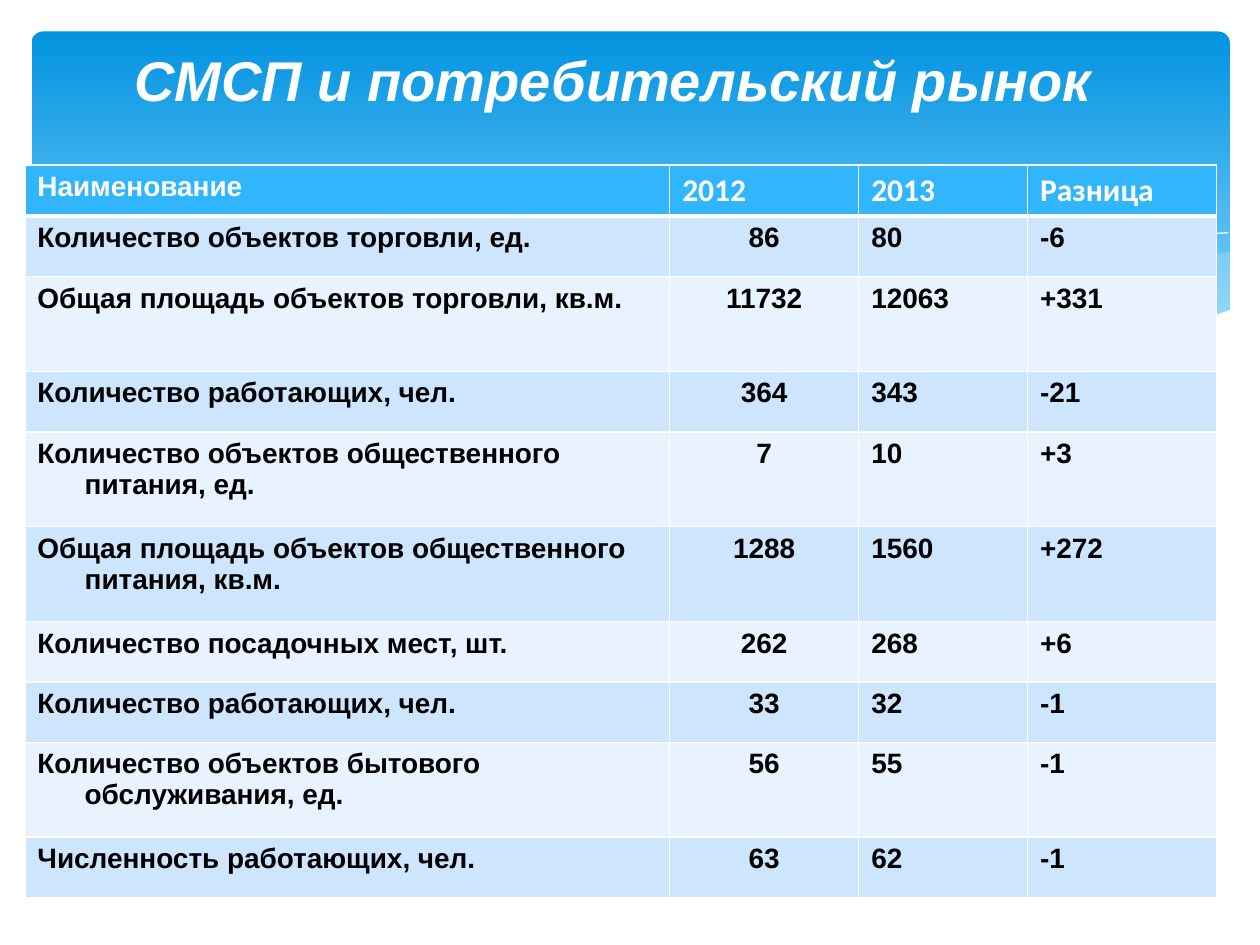
import pptx
import pptx.dml.color
import pptx.enum.dml
import pptx.enum.shapes
import pptx.enum.text
import pptx.oxml
import pptx.oxml.ns
import pptx.util
from dataclasses import dataclass

Pt = pptx.util.Pt
Align = pptx.enum.text.PP_ALIGN


@dataclass(frozen=True)
class Theme:
    white: str = "FFFFFF"
    black: str = "000000"
    banner_top: str = "0293E0"
    banner_bottom: str = "83D3FE"
    wave: str = "C6E7FC"
    header: str = "31B6FD"
    bands: tuple = ("CEE5FE", "E8F3FF")
    body_font: str = "Arial"
    header_font: str = "Calibri"
    title_size: int = 32
    header_size: int = 18
    body_size: int = 16


HEADINGS = ("Наименование", "2012", "2013", "Разница")
ROWS = (
    ("Количество объектов торговли, ед.", "86", "80", "-6"),
    ("Общая площадь объектов торговли, кв.м.", "11732", "12063", "+331"),
    ("Количество работающих, чел.", "364", "343", "-21"),
    ("Количество объектов общественного питания, ед.", "7", "10", "+3"),
    ("Общая площадь объектов общественного питания, кв.м.", "1288", "1560", "+272"),
    ("Количество посадочных мест, шт.", "262", "268", "+6"),
    ("Количество работающих, чел.", "33", "32", "-1"),
    ("Количество объектов бытового обслуживания, ед.", "56", "55", "-1"),
    ("Численность работающих, чел.", "63", "62", "-1"),
)
COLUMN_WIDTHS = (368.5, 108, 96.5, 108)
HEADER_HEIGHT, SHORT_ROW, TALL_ROW = 29.2, 34.5, 54.25
TALL_ROWS = (2, 4, 5, 8)

RIGHT_WAVE = (
    (702, 144), (673, 149), (620, 160.5), (579.5, 170.5), (525, 182), (476, 191),
    (507.5, 195), (545, 198.5), (578, 200), (615, 198.5), (646, 194.5),
    (673, 188.5), (693.5, 181.5), (702.7, 178), (702.7, 144),
)
LONG_WAVE = (
    (643, 196.5), (602.5, 191), (558, 183), (508, 173), (453, 160), (409.5, 150),
    (370, 142.5), (335, 137.5), (302.5, 134.5), (273.5, 133.2), (236, 134.5),
    (206, 137.5), (246, 143.5), (291, 152), (323.5, 160), (381.5, 173),
    (432.5, 183.5), (479, 191.5), (520, 197.5), (556.5, 199.5), (589, 200),
    (617, 199.5),
)
FALLING_LINE = (
    (222.5, 140.5), (247.5, 137), (278.5, 134.5), (312, 134.5), (352, 137),
    (400.5, 142), (458, 150), (523.5, 162.5), (572.5, 173.5), (625.5, 188), (653, 196),
)
RISING_LINE = (
    (441.5, 185), (484, 173.5), (538.5, 160.5), (580.5, 151), (623.5, 143.5),
    (655, 138), (684.5, 134.5), (702, 133.2),
)
WHITE_WAVE = (
    (703.4, 177), (684, 184.5), (662.5, 191), (638.5, 195), (612, 198),
    (582.5, 199.5), (548, 198), (510, 194.5), (466.5, 188.5), (417, 180),
    (362, 168), (322, 158.5), (281.5, 149), (245, 142), (210, 137), (180, 134),
    (139, 132.5), (105, 133), (76.5, 136), (54.5, 140.5), (33, 146),
    (16.6, 153.5), (16.6, 237), (703.4, 237),
)


def rgb(color):
    return pptx.dml.color.RGBColor.from_string(color)


def write_text(frame, text, *, font, size, color, italic=False, align=Align.LEFT,
               hanging=0, space_before=0):
    paragraph = frame.paragraphs[0]
    paragraph.alignment = align
    paragraph.space_before = Pt(space_before)
    if hanging:
        properties = paragraph._p.get_or_add_pPr()
        properties.set("marL", str(Pt(hanging)))
        properties.set("indent", str(-Pt(hanging)))
    run = paragraph.add_run()
    run.text = text
    run.font.name = font
    run.font.size = Pt(size)
    run.font.bold = True
    run.font.italic = italic
    run.font.color.rgb = rgb(color)


def set_borders(cell, color, **widths):
    """Draw cell borders; widths are keyed by side: L, R, T, B."""
    properties = cell._tc.get_or_add_tcPr()
    for position, (side, width) in enumerate(widths.items()):
        properties.insert(position, pptx.oxml.parse_xml(
            f'<a:ln{side} {pptx.oxml.ns.nsdecls("a")} w="{Pt(width)}"><a:solidFill>'
            f'<a:srgbClr val="{color}"/></a:solidFill></a:ln{side}>'))


class SlideBuilder:
    def __init__(self, slide, theme):
        self.slide = slide
        self.theme = theme

    def banner(self, left, top, width, height):
        shape = self.slide.shapes.add_shape(
            pptx.enum.shapes.MSO_SHAPE.ROUNDED_RECTANGLE,
            Pt(left), Pt(top), Pt(width), Pt(height))
        shape.adjustments[0] = 0.034
        shape.shadow.inherit = False
        shape.line.fill.background()
        shape.fill.gradient()
        shape.fill.gradient_angle = 270
        stops = ((0, self.theme.banner_top), (0.9, self.theme.banner_bottom))
        for stop, (position, color) in zip(shape.fill.gradient_stops, stops):
            stop.position = position
            stop.color.rgb = rgb(color)

    def outline(self, points, closed):
        builder = self.slide.shapes.build_freeform(*points[0], scale=Pt(1))
        builder.add_line_segments(points[1:], close=closed)
        shape = builder.convert_to_shape()
        shape.shadow.inherit = False
        return shape

    def wave(self, points, color, opacity=100):
        shape = self.outline(points, closed=True)
        shape.line.fill.background()
        shape.fill.solid()
        shape.fill.fore_color.rgb = rgb(color)
        if opacity < 100:
            color_element = shape._element.spPr.find(
                ".//" + pptx.oxml.ns.qn("a:srgbClr"))
            color_element.append(pptx.oxml.parse_xml(
                f'<a:alpha {pptx.oxml.ns.nsdecls("a")} val="{opacity * 1000}"/>'))

    def curve(self, points):
        shape = self.outline(points, closed=False)
        shape.fill.background()
        shape.line.color.rgb = rgb(self.theme.white)
        shape.line.width = Pt(0)

    def title(self, text, left, top, width, height):
        frame = self.slide.shapes.add_textbox(
            Pt(left), Pt(top), Pt(width), Pt(height)).text_frame
        frame.word_wrap = True
        frame.vertical_anchor = pptx.enum.text.MSO_ANCHOR.MIDDLE
        write_text(frame, text, font=self.theme.body_font, size=self.theme.title_size,
                   color=self.theme.white, italic=True, align=Align.CENTER)

    def table(self, left, top):
        theme = self.theme
        heights = [HEADER_HEIGHT] + [
            TALL_ROW if row in TALL_ROWS else SHORT_ROW
            for row in range(1, len(ROWS) + 1)]
        table = self.slide.shapes.add_table(
            len(heights), len(HEADINGS), Pt(left), Pt(top),
            Pt(sum(COLUMN_WIDTHS)), Pt(sum(heights))).table
        table.horz_banding = False
        for column, width in zip(table.columns, COLUMN_WIDTHS):
            column.width = Pt(width)
        for row_index, values in enumerate((HEADINGS, *ROWS)):
            table.rows[row_index].height = Pt(heights[row_index])
            for column_index, text in enumerate(values):
                cell = table.cell(row_index, column_index)
                first = column_index == 0
                style = dict(font=theme.body_font, size=theme.body_size)
                if row_index == 0:
                    fill = theme.header
                    style["color"] = theme.white
                    if first:
                        style["space_before"] = 3.2
                    else:
                        style.update(font=theme.header_font, size=theme.header_size)
                else:
                    fill = theme.bands[(row_index - 1) % 2]
                    style.update(color=theme.black, hanging=27 if column_index < 2 else 0)
                    if column_index == 1:
                        style["align"] = Align.CENTER
                cell.fill.solid()
                cell.fill.fore_color.rgb = rgb(fill)
                set_borders(cell, theme.white, L=1, R=1, T=3 if row_index == 1 else 1,
                            B=3 if row_index == 0 else 1)
                write_text(cell.text_frame, text, **style)


def main():
    presentation = pptx.Presentation()
    presentation.slide_width, presentation.slide_height = Pt(720), Pt(540)
    theme = Theme()
    builder = SlideBuilder(
        presentation.slides.add_slide(presentation.slide_layouts[6]), theme)
    builder.banner(18, 18, 684.7, 194.4)
    builder.wave(RIGHT_WAVE, theme.wave, opacity=29)
    builder.wave(LONG_WAVE, theme.wave, opacity=40)
    builder.curve(FALLING_LINE)
    builder.curve(RISING_LINE)
    builder.wave(WHITE_WAVE, theme.white)
    builder.table(14.2, 94.3)
    builder.title("СМСП и потребительский рынок ", 31, 0, 648, 90)
    presentation.save("out.pptx")


if __name__ == "__main__":
    main()
